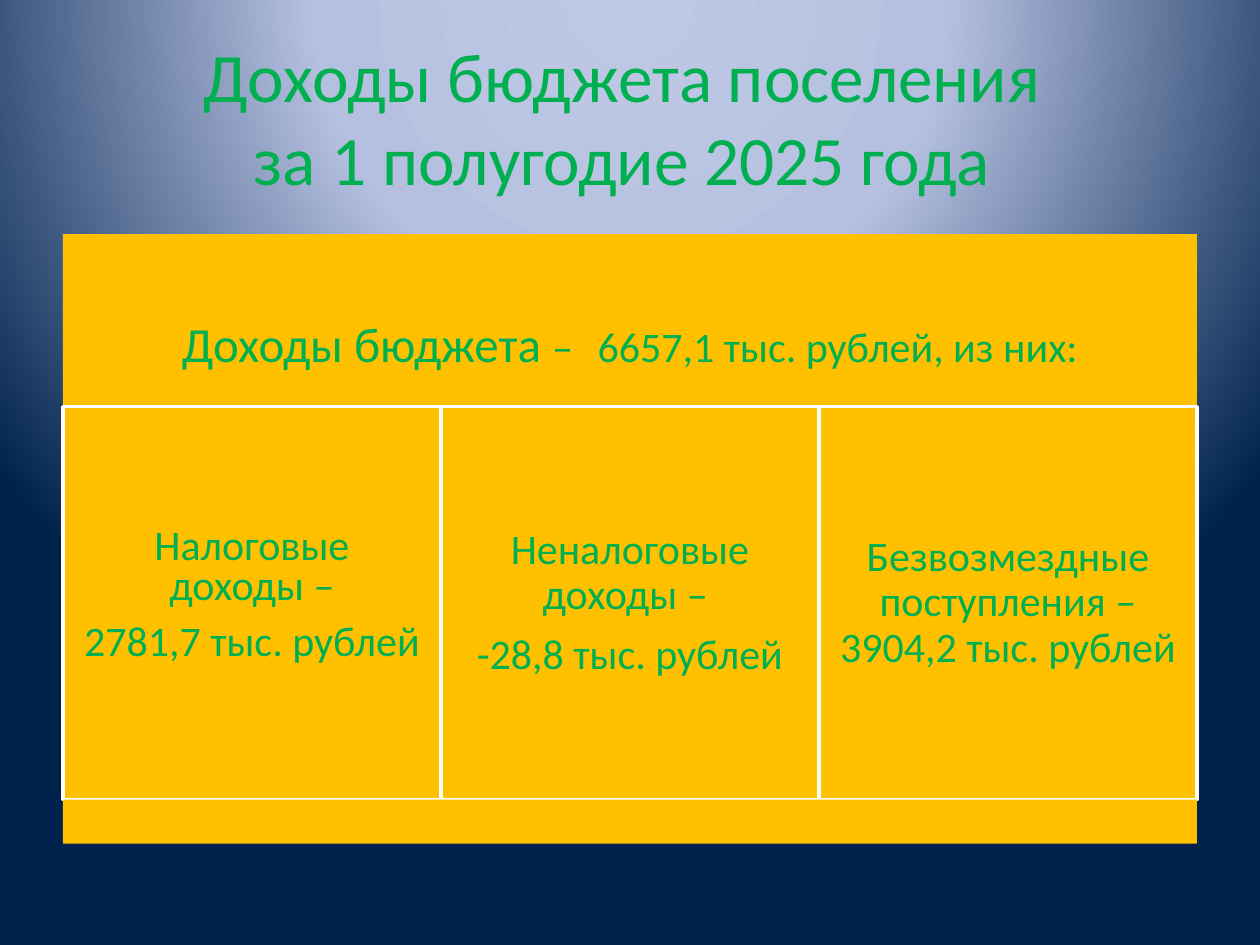
from lxml.etree import SubElement
from pptx import Presentation
from pptx.dml.color import RGBColor
from pptx.enum.shapes import MSO_SHAPE
from pptx.enum.text import MSO_ANCHOR, PP_ALIGN
from pptx.oxml.ns import qn
from pptx.util import Cm, Pt

COLOURS = {
    "text": "00B050",
    "panel": "FFC000",
    "border": "FFFFFF",
    "glow": "BFC9E5",
    "haze": "B5C0E0",
    "night": "00234D",
}
FONT = "Calibri"
LEFT, WIDTH = 1.27, 22.86
HEADER_TOP, HEADER_HEIGHT = 4.72, 3.76
COLUMN_TOP, COLUMN_HEIGHT = 8.2, 7.92
FOOTER_HEIGHT = 0.89

HEADER = [(0.9, [("Доходы бюджета ", 28), ("–", 24), (" ", 62),
                 ("6657,1 тыс. рублей, из них:", 24)])]
COLUMNS = [
    [(0.5, "Налоговые"), (0.5, " доходы – "), (0.9, "2781,7 тыс. рублей")],
    [(0.9, "Неналоговые доходы – "), (0.9, "-28,8 тыс. рублей")],
    [(0.9, "Безвозмездные поступления – 3904,2 тыс. рублей")],
]


class SlideBuilder:
    def __init__(self, presentation):
        self.slide = presentation.slides.add_slide(presentation.slide_layouts[5])

    def colour(self, name):
        return RGBColor.from_string(COLOURS[name])

    def background(self, stops):
        fill = self.slide.background.fill
        fill.gradient()
        gradient = fill._fill._gradFill
        for child in list(gradient):
            gradient.remove(child)
        stop_list = SubElement(gradient, qn("a:gsLst"))
        for position, name in stops:
            stop = SubElement(stop_list, qn("a:gs"), pos=str(position * 1000))
            SubElement(stop, qn("a:srgbClr"), val=COLOURS[name])
        circle = SubElement(gradient, qn("a:path"), path="circle")
        SubElement(circle, qn("a:fillToRect"),
                   l="50000", t="-80000", r="50000", b="180000")

    def run(self, paragraph, text, size):
        run = paragraph.add_run()
        run.text = text
        run.font.size = Pt(size)
        run.font.name = FONT
        run.font.color.rgb = self.colour("text")

    def title(self, lines, size):
        title = self.slide.shapes.title
        title.left, title.top = Cm(LEFT), Cm(0.76)
        title.width, title.height = Cm(WIDTH), Cm(3.18)
        title.text_frame.vertical_anchor = MSO_ANCHOR.MIDDLE
        paragraph = title.text_frame.paragraphs[0]
        paragraph.alignment = PP_ALIGN.CENTER
        for index, line in enumerate(lines):
            if index:
                paragraph.add_line_break()
            self.run(paragraph, line, size)

    def panel(self, left, top, width, height, paragraphs=(), inset=0.25, border=False):
        shape = self.slide.shapes.add_shape(
            MSO_SHAPE.RECTANGLE, Cm(left), Cm(top), Cm(width), Cm(height))
        shape.shadow.inherit = False
        shape.fill.solid()
        shape.fill.fore_color.rgb = self.colour("panel")
        if border:
            shape.line.color.rgb = self.colour("border")
            shape.line.width = Pt(2)
        else:
            shape.line.fill.background()
        frame = shape.text_frame
        frame.word_wrap = True
        frame.vertical_anchor = MSO_ANCHOR.MIDDLE
        frame.margin_left = frame.margin_right = Cm(inset)
        frame.margin_top = frame.margin_bottom = Cm(inset)
        for index, (spacing, runs) in enumerate(paragraphs):
            paragraph = frame.add_paragraph() if index else frame.paragraphs[0]
            paragraph.alignment = PP_ALIGN.CENTER
            paragraph.line_spacing = spacing
            paragraph.space_after = Pt(8.4)
            for text, size in runs:
                self.run(paragraph, text, size)


def main():
    presentation = Presentation()
    presentation.slide_width, presentation.slide_height = Cm(25.4), Cm(19.05)
    builder = SlideBuilder(presentation)
    builder.background([(0, "glow"), (40, "haze"), (100, "night")])
    builder.title(["Доходы бюджета поселения ", "за 1 полугодие 2025 года "], 39.6)
    builder.panel(LEFT, HEADER_TOP, WIDTH, HEADER_HEIGHT, HEADER, inset=0.3)
    column_width = WIDTH / len(COLUMNS)
    for index, lines in enumerate(COLUMNS):
        paragraphs = [(spacing, [(text, 24)]) for spacing, text in lines]
        builder.panel(LEFT + index * column_width, COLUMN_TOP, column_width,
                      COLUMN_HEIGHT, paragraphs, border=True)
    builder.panel(LEFT, COLUMN_TOP + COLUMN_HEIGHT, WIDTH, FOOTER_HEIGHT)
    presentation.save("out.pptx")


if __name__ == "__main__":
    main()
